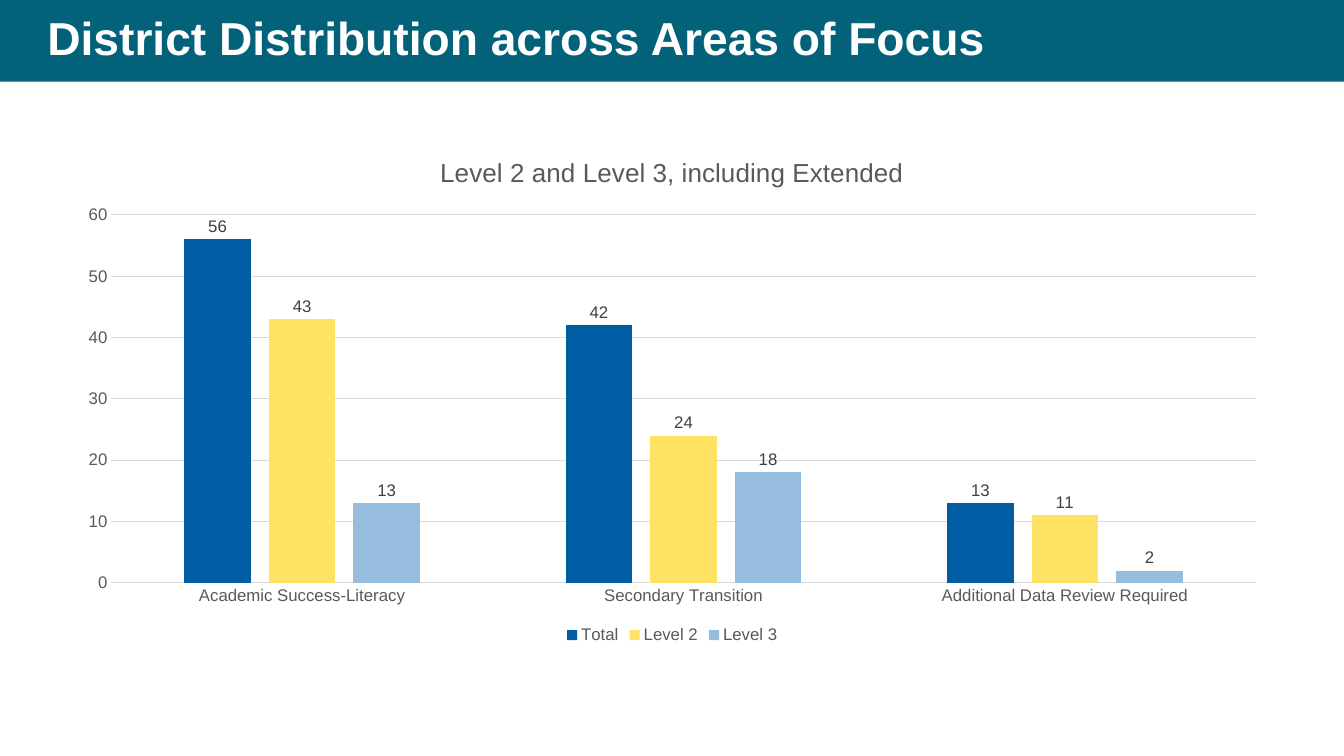
from dataclasses import dataclass

from pptx import Presentation
from pptx.chart.data import CategoryChartData as ChartData
from pptx.dml.color import RGBColor
from pptx.enum.chart import XL_CHART_TYPE as Kind
from pptx.enum.chart import XL_LABEL_POSITION as LabelPos
from pptx.enum.chart import XL_LEGEND_POSITION as LegendPos
from pptx.enum.chart import XL_TICK_MARK as Tick
from pptx.enum.shapes import MSO_SHAPE as Preset
from pptx.enum.text import MSO_ANCHOR as Anchor
from pptx.enum.text import MSO_AUTO_SIZE as Fit
from pptx.enum.text import PP_ALIGN as Align
from pptx.util import Pt

FACE = "Arial"
GRAY = "595959"
RULE = "D9D9D9"
BAR_H = 58.4


@dataclass
class Level:
    name: str
    vals: tuple[int, ...]
    color: str


AREAS = (
    "Academic Success-Literacy",
    "Secondary Transition",
    "Additional Data Review Required",
)
LEVELS = (
    Level("Total", (56, 42, 13), "005CA3"),
    Level("Level 2", (43, 24, 11), "FDE263"),
    Level("Level 3", (13, 18, 2), "96BCDE"),
)


def paint(color, code: str) -> None:
    color.rgb = RGBColor.from_string(code)


def set_font(font, size: float, code: str, bold: bool = False) -> None:
    font.name, font.size, font.bold = FACE, Pt(size), bold
    paint(font.color, code)


def set_fill(fill, code: str) -> None:
    fill.solid()
    paint(fill.fore_color, code)


def set_line(line, code: str) -> None:
    line.width = Pt(0.75)
    set_fill(line.fill, code)


def add_head(slide) -> None:
    title = slide.shapes.title
    title.left, title.top = Pt(26.6), Pt(0)
    title.width, title.height = Pt(887), Pt(BAR_H)
    frame = title.text_frame
    frame.text = "District Distribution across Areas of Focus"
    frame.auto_size = Fit.NONE
    frame.word_wrap = True
    frame.vertical_anchor = Anchor.MIDDLE
    para = frame.paragraphs[0]
    para.alignment = Align.LEFT
    para.line_spacing = 0.9
    set_font(para.runs[0].font, 33, "FFFFFF", True)

    # Band placed behind the title
    band = slide.shapes.add_shape(Preset.RECTANGLE, 0, 0, Pt(960), Pt(BAR_H))
    band.shadow.inherit = False
    set_fill(band.fill, "03617A")
    band.line.fill.background()
    title._element.addprevious(band._element)


def add_bars(slide) -> None:
    data = ChartData()
    data.categories = AREAS
    for level in LEVELS:
        data.add_series(level.name, level.vals)
    frame = slide.shapes.add_chart(
        Kind.COLUMN_CLUSTERED, Pt(46), Pt(96.5), Pt(868.3), Pt(366.5), data
    )
    chart = frame.chart
    set_font(chart.font, 10, "000000")

    # Chart title and legend
    chart.has_title = True
    head = chart.chart_title
    head.include_in_layout = False
    head.text_frame.text = "Level 2 and Level 3, including Extended"
    set_font(head.text_frame.paragraphs[0].runs[0].font, 18.6, GRAY)
    chart.has_legend = True
    chart.legend.position = LegendPos.BOTTOM
    chart.legend.include_in_layout = False
    set_font(chart.legend.font, 12, GRAY)

    # Axes
    cats, scale = chart.category_axis, chart.value_axis
    for axis in (cats, scale):
        axis.major_tick_mark = axis.minor_tick_mark = Tick.NONE
        set_font(axis.tick_labels.font, 12, GRAY)
    set_line(cats.format.line, RULE)
    scale.minimum_scale, scale.maximum_scale, scale.major_unit = 0, 60, 10
    scale.format.line.fill.background()
    scale.has_major_gridlines = True
    set_line(scale.major_gridlines.format.line, RULE)

    # Columns and their labels
    plot = chart.plots[0]
    plot.gap_width, plot.overlap = 219, -27
    plot.vary_by_categories = False
    for level, series in zip(LEVELS, plot.series):
        set_fill(series.format.fill, level.color)
        series.invert_if_negative = False
        labels = series.data_labels
        labels.show_value = True
        labels.position = LabelPos.OUTSIDE_END
        set_font(labels.font, 12, "404040")


def main() -> None:
    deck = Presentation()
    deck.slide_width, deck.slide_height = Pt(960), Pt(540)
    slide = deck.slides.add_slide(deck.slide_layouts[5])
    add_head(slide)
    add_bars(slide)
    deck.save("out.pptx")


if __name__ == "__main__":
    main()
